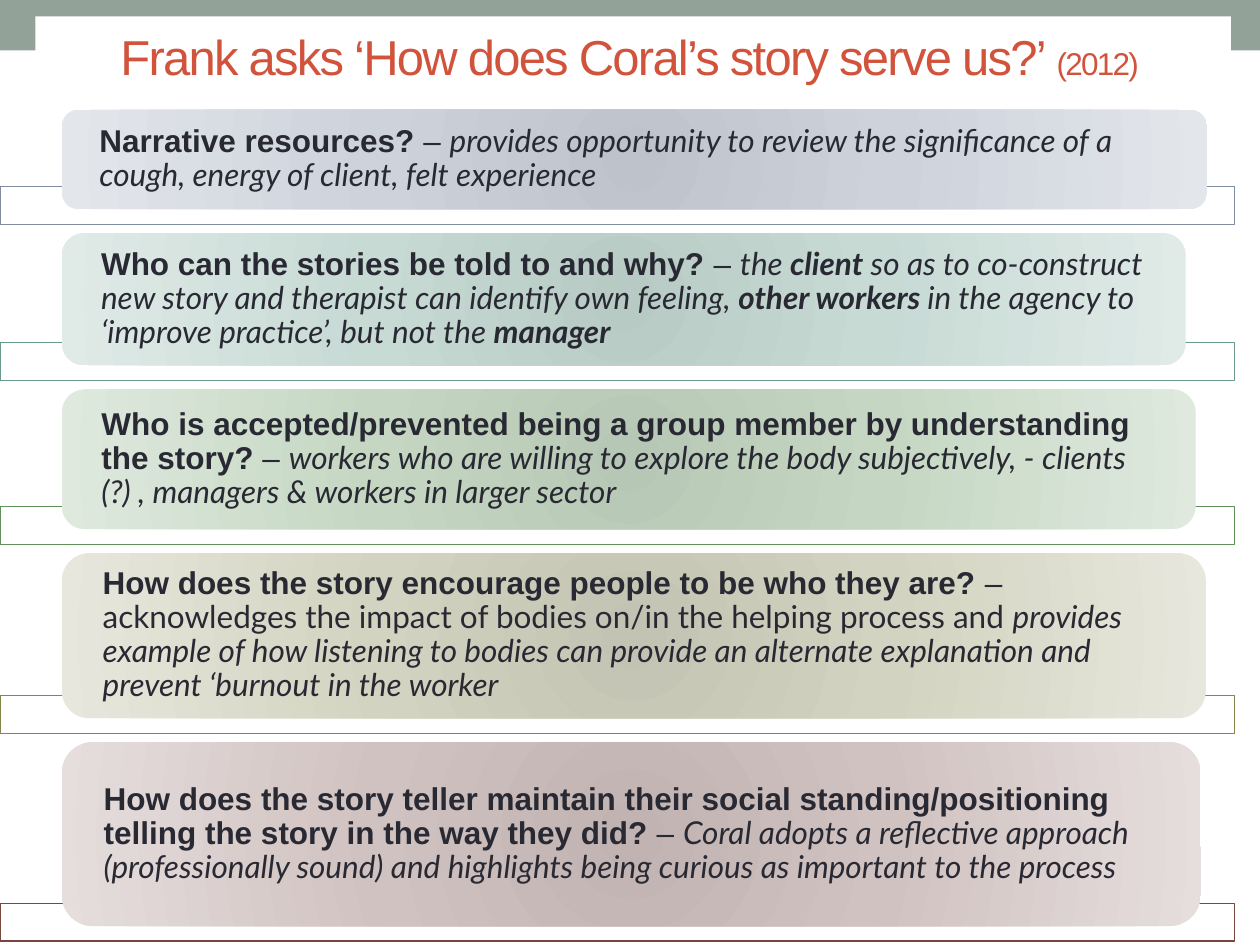
from lxml import etree
from pptx import Presentation
from pptx.dml.color import RGBColor
from pptx.enum import shapes, text
from pptx.oxml import parse_xml
from pptx.oxml.ns import nsdecls, qn
from pptx.util import Inches, Pt

SAGE = RGBColor(0x93, 0xA2, 0x99)
WHITE = RGBColor(0xFF, 0xFF, 0xFF)
INK = RGBColor(0x29, 0x29, 0x34)
RUST = RGBColor(0xD2, 0x53, 0x3C)

QUESTION = dict(name="Arial", bold=True, italic=False)
DASH = dict(name="Arial", bold=False, italic=False)
PLAIN = dict(name="Lato", bold=False, italic=False)
ANSWER = dict(name="Lato", bold=False, italic=True)
STRONG = dict(name="Lato", bold=True, italic=True)

CARDS = [
    (9.09, 0.79, "808DA0", ("BEC3CB", "CDD2DB", "E3E6EB"), "Narrative resources? ", [
        ("provides opportunity to review the significance of a cough, "
         "energy of client, felt experience", ANSWER)]),
    (8.92, 1.05, "6B9A8E", ("B8CAC4", "C7DAD4", "E0EAE7"),
     "Who can the stories be told to and why? ", [
        ("the ", ANSWER), ("client", STRONG),
        (" so as to co-construct new story and therapist can identify own feeling, ", ANSWER),
        ("other workers ", STRONG),
        ("in the agency to ‘improve practice’, but not the ", ANSWER),
        ("manager", STRONG)]),
    (9, 1.11, "61915A", ("B7C7B5", "C5D7C3", "DFE9DE"),
     "Who is accepted/prevented being a group member by understanding the story? ", [
        ("workers who are willing to explore the body subjectively, "
         "- clients (?) , managers & workers in larger sector", ANSWER)]),
    (9.08, 1.31, "85864B", ("C3C3B3", "D3D3C1", "E7E7DD"),
     "How does the story encourage people to be who they are? ", [
        ("acknowledges the impact of bodies on/in the helping process and ", PLAIN),
        ("provides example of how listening to bodies can provide an alternate "
         "explanation and prevent ‘burnout in the worker", ANSWER)]),
    (9.04, 1.46, "79463D", ("C0B3B1", "D0C2C0", "E5DEDD"),
     "How does the story teller maintain their social standing/positioning "
     "telling the story in the way they did? ", [
        ("Coral adopts a reflective approach (professionally sound) and highlights "
         "being curious as important to the process", ANSWER)]),
]


def add_box(s, kind, x, y, w, h, fill=None):
    sp = s.shapes.add_shape(kind, Inches(x), Inches(y), Inches(w), Inches(h))
    sp.shadow.inherit = False
    sp.line.fill.background()
    if fill is not None:
        sp.fill.solid()
        sp.fill.fore_color.rgb = fill
    return sp


def add_run(p, wording, color, size, formats):
    r = p.add_run()
    r.text = wording
    r.font.size = Pt(size)
    r.font.color.rgb = color
    for key, value in formats.items():
        setattr(r.font, key, value)
    return r


def set_frame(tf, margin):
    formats = dict(word_wrap=True, vertical_anchor=text.MSO_ANCHOR.MIDDLE,
                   margin_left=Inches(margin), margin_right=Inches(margin),
                   margin_top=0, margin_bottom=0)
    for key, value in formats.items():
        setattr(tf, key, value)


def set_radial_fill(sp, colors):
    stops = "".join(f'<a:gs pos="{pos}"><a:srgbClr val="{color}"/></a:gs>'
                    for pos, color in zip((0, 45000, 100000), colors))
    grad = parse_xml(
        f'<a:gradFill {nsdecls("a")} rotWithShape="1"><a:gsLst>{stops}</a:gsLst>'
        '<a:path path="circle"><a:fillToRect l="100000" t="100000" r="100000" b="100000"/>'
        '</a:path></a:gradFill>')
    sp.fill.solid()
    solid = sp.fill._xPr.find(qn("a:solidFill"))
    solid.getparent().replace(solid, grad)


def add_title(s, x, y, w, h):
    sp = add_box(s, shapes.MSO_SHAPE.RECTANGLE, x, y, w, h, WHITE)
    set_frame(sp.text_frame, 0.1)
    p = sp.text_frame.paragraphs[0]
    p.alignment = text.PP_ALIGN.CENTER
    for wording, size in (("Frank asks ‘How does Coral’s story serve us?’ ", 28), ("(2012) ", 18)):
        r = add_run(p, wording, RUST, size, DASH)
        r.font._element.set("spc", "-100")


def add_bar(s, x, y, w, h, color):
    sp = add_box(s, shapes.MSO_SHAPE.RECTANGLE, x, y, w, h, WHITE)
    clr = sp.fill._xPr.find(qn("a:solidFill"))[0]
    etree.SubElement(clr, qn("a:alpha")).set("val", "90000")
    sp.line.color.rgb = RGBColor.from_string(color)
    sp.line.width = Pt(0.75)


def add_card(s, x, y, w, h, colors, question, answer):
    sp = add_box(s, shapes.MSO_SHAPE.ROUNDED_RECTANGLE, x, y, w, h)
    set_radial_fill(sp, colors)
    inset = 0.05 * h
    tb = s.shapes.add_textbox(Inches(x + inset), Inches(y + inset),
                              Inches(w - 2 * inset), Inches(h - 2 * inset))
    set_frame(tb.text_frame, 0.26)
    p = tb.text_frame.paragraphs[0]
    p.line_spacing = 0.9
    for wording, formats in [(question, QUESTION), ("– ", DASH)] + answer:
        add_run(p, wording, INK, 18, formats)


def add_questions(s, x, y, w):
    for card_w, h, line, colors, question, answer in CARDS:
        add_bar(s, x, y + h - 0.18, w, 0.3, line)
        add_card(s, x + 0.49, y, card_w, h, colors, question, answer)
        y += h + 0.19


def main():
    prs = Presentation()
    prs.slide_width, prs.slide_height = Inches(10), Inches(7.5)
    s = prs.slides.add_slide(prs.slide_layouts[6])
    add_box(s, shapes.MSO_SHAPE.RECTANGLE, 0, 0, 10, 0.4, SAGE)
    add_questions(s, 0, 0.87, 9.8)
    add_title(s, 0.28, 0.13, 9.49, 0.63)
    prs.save("out.pptx")


if __name__ == "__main__":
    main()
